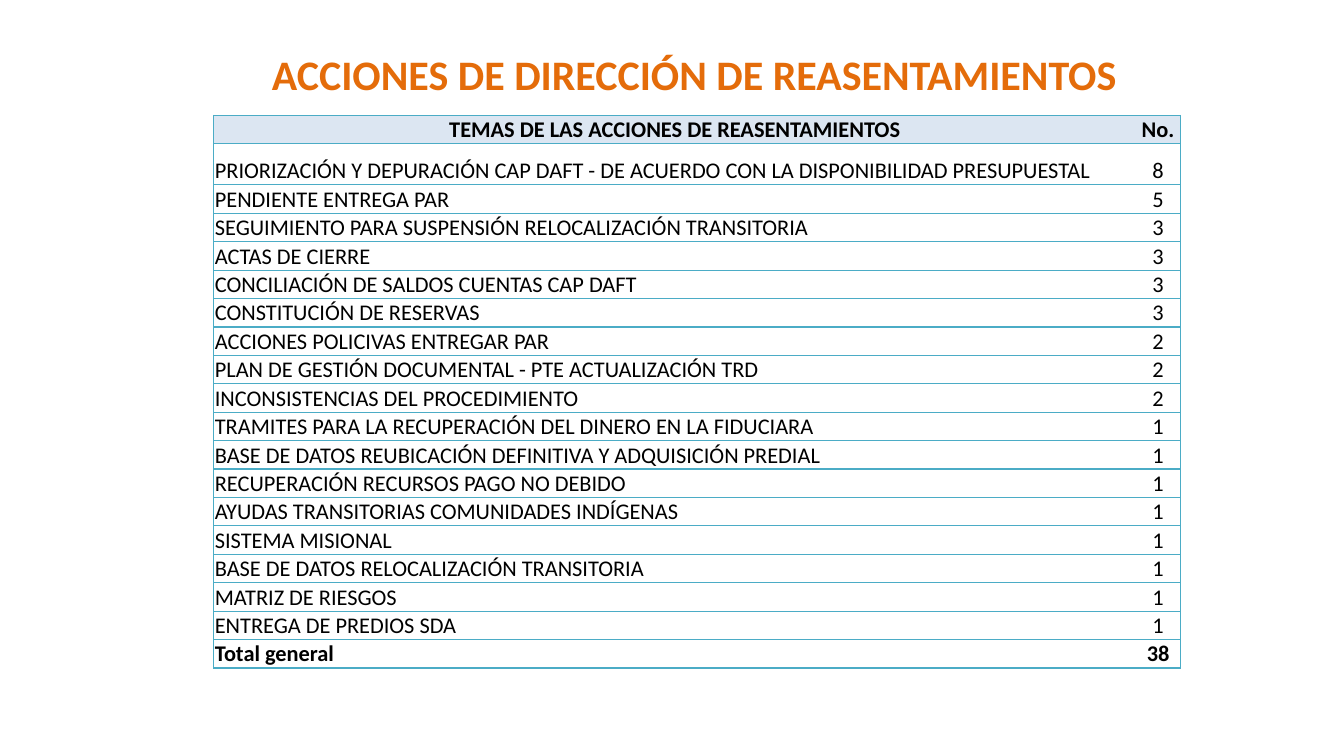
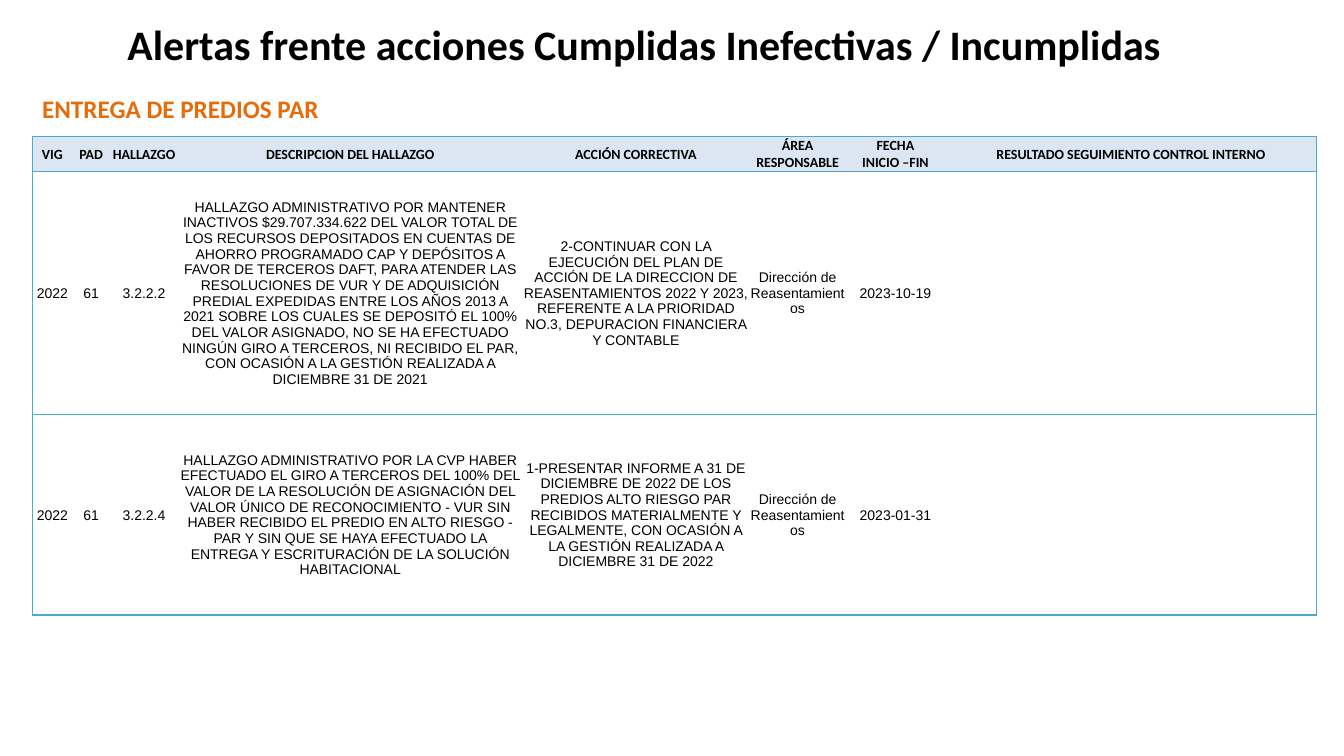
import pptx
import pptx.dml.color
import pptx.enum.text
import pptx.oxml
import pptx.oxml.ns
import pptx.util

Pt = pptx.util.Pt
ALIGN = pptx.enum.text.PP_ALIGN
ANCHOR = pptx.enum.text.MSO_ANCHOR

BLACK, WHITE, ORANGE = "000000", "FFFFFF", "E46C0A"
HEADER_FILL, BORDER = "DCE6F2", "4BACC6"

TITLE = {"name": "Calibri", "size": Pt(30), "bold": True}
SUBTITLE = {**TITLE, "size": Pt(18)}
CELL_MARGINS = {"margin_left": Pt(0.72), "margin_right": Pt(0.72),
                "margin_top": Pt(0.72), "margin_bottom": 0}

TOPICS = [
    ("TEMAS DE LAS ACCIONES DE REASENTAMIENTOS", "No."),
    ("PRIORIZACIÓN Y DEPURACIÓN CAP DAFT - DE ACUERDO CON LA DISPONIBILIDAD PRESUPUESTAL", "8"),
    ("PENDIENTE ENTREGA PAR", "5"),
    ("SEGUIMIENTO PARA SUSPENSIÓN RELOCALIZACIÓN TRANSITORIA", "3"),
    ("ACTAS DE CIERRE", "3"),
    ("CONCILIACIÓN DE SALDOS CUENTAS CAP DAFT", "3"),
    ("CONSTITUCIÓN DE RESERVAS", "3"),
    ("ACCIONES POLICIVAS ENTREGAR PAR", "2"),
    ("PLAN DE GESTIÓN DOCUMENTAL - PTE ACTUALIZACIÓN TRD", "2"),
    ("INCONSISTENCIAS DEL PROCEDIMIENTO", "2"),
    ("TRAMITES PARA LA RECUPERACIÓN DEL DINERO EN LA FIDUCIARA", "1"),
    ("BASE DE DATOS REUBICACIÓN DEFINITIVA Y ADQUISICIÓN PREDIAL", "1"),
    ("RECUPERACIÓN RECURSOS PAGO NO DEBIDO", "1"),
    ("AYUDAS TRANSITORIAS COMUNIDADES INDÍGENAS", "1"),
    ("SISTEMA MISIONAL", "1"),
    ("BASE DE DATOS RELOCALIZACIÓN TRANSITORIA", "1"),
    ("MATRIZ DE RIESGOS", "1"),
    ("ENTREGA DE PREDIOS SDA", "1"),
    ("Total general", "38"),
]

FINDINGS = [
    ("VIG", "PAD", "HALLAZGO", "DESCRIPCION DEL HALLAZGO", "ACCIÓN CORRECTIVA",
     "ÁREA RESPONSABLE", "FECHA\nINICIO –FIN", "RESULTADO SEGUIMIENTO CONTROL INTERNO"),
    ("2022", "61", "3.2.2.2",
     "HALLAZGO ADMINISTRATIVO POR MANTENER INACTIVOS $29.707.334.622 DEL VALOR TOTAL DE LOS "
     "RECURSOS DEPOSITADOS EN CUENTAS DE AHORRO PROGRAMADO CAP Y DEPÓSITOS A FAVOR DE TERCEROS "
     "DAFT, PARA ATENDER LAS RESOLUCIONES DE VUR Y DE ADQUISICIÓN PREDIAL EXPEDIDAS ENTRE LOS "
     "AÑOS 2013 A 2021 SOBRE LOS CUALES SE DEPOSITÓ EL 100% DEL VALOR ASIGNADO, NO SE HA "
     "EFECTUADO NINGÚN GIRO A TERCEROS, NI RECIBIDO EL PAR, CON OCASIÓN A LA GESTIÓN REALIZADA "
     "A DICIEMBRE 31 DE 2021",
     "2-CONTINUAR CON LA EJECUCIÓN DEL PLAN DE ACCIÓN DE LA DIRECCION DE REASENTAMIENTOS 2022 "
     "Y 2023, REFERENTE A LA PRIORIDAD NO.3, DEPURACION FINANCIERA Y CONTABLE",
     "Dirección de Reasentamientos", "2023-10-19", ""),
    ("2022", "61", "3.2.2.4",
     "HALLAZGO ADMINISTRATIVO POR LA CVP HABER EFECTUADO EL GIRO A TERCEROS DEL 100% DEL VALOR "
     "DE LA RESOLUCIÓN DE ASIGNACIÓN DEL VALOR ÚNICO DE RECONOCIMIENTO - VUR SIN HABER RECIBIDO "
     "EL PREDIO EN ALTO RIESGO - PAR Y SIN QUE SE HAYA EFECTUADO LA ENTREGA Y ESCRITURACIÓN DE "
     "LA SOLUCIÓN HABITACIONAL",
     "1-PRESENTAR INFORME A 31 DE DICIEMBRE DE 2022 DE LOS PREDIOS ALTO RIESGO PAR RECIBIDOS "
     "MATERIALMENTE Y LEGALMENTE, CON OCASIÓN A LA GESTIÓN REALIZADA A DICIEMBRE 31 DE 2022",
     "Dirección de Reasentamientos", "2023-01-31", ""),
]


def rgb(value):
    return pptx.dml.color.RGBColor.from_string(value)


def set_attrs(obj, values):
    for name, value in values.items():
        setattr(obj, name, value)


def write(tf, text, font, color=BLACK, align=ALIGN.LEFT):
    """Fill a text frame, one paragraph per line of text."""
    tf.text = text
    for p in tf.paragraphs:
        p.alignment = align
        for r in p.runs:
            set_attrs(r.font, font)
            r.font.color.rgb = rgb(color)


def add_text(s, box, text, font, color=BLACK, align=ALIGN.LEFT, **frame):
    tf = s.shapes.add_textbox(*map(Pt, box)).text_frame
    set_attrs(tf, {"word_wrap": True, **frame})
    write(tf, text, font, color, align)


def set_borders(cell, sides):
    """Draw the named sides (of L, R, T, B) and clear the others."""
    tcPr = cell._tc.get_or_add_tcPr()
    for side in "LRTB":
        fill = (f'<a:solidFill><a:srgbClr val="{BORDER}"/></a:solidFill>'
                if side in sides else "<a:noFill/>")
        tcPr.append(pptx.oxml.parse_xml(
            f'<a:ln{side} {pptx.oxml.ns.nsdecls("a")} w="{Pt(1)}">{fill}</a:ln{side}>'))


def add_table(s, left, top, widths, heights, rows, style):
    """style(row, column) gives the font, alignment and anchor of a cell."""
    frame = s.shapes.add_table(len(rows), len(widths), Pt(left), Pt(top),
                               Pt(sum(widths)), Pt(sum(heights)))
    table = frame.table
    set_attrs(table, {"first_row": False, "horz_banding": False})
    for column, width in zip(table.columns, widths):
        column.width = Pt(width)
    for row, height in zip(table.rows, heights):
        row.height = Pt(height)
    for i, row in enumerate(rows):
        for j, text in enumerate(row):
            cell = table.cell(i, j)
            font, align, anchor = style(i, j)
            set_attrs(cell, {**CELL_MARGINS, "vertical_anchor": anchor})
            set_borders(cell, "TB" + "L" * (j == 0) + "R" * (j == len(row) - 1))
            cell.fill.solid()
            cell.fill.fore_color.rgb = rgb(WHITE if i else HEADER_FILL)
            write(cell.text_frame, text, font, align=align)


def topic_style(i, j):
    last = len(TOPICS) - 1
    font = {"name": "Calibri", "size": Pt(16), "bold": i in (0, last)}
    align = ALIGN.CENTER if i == 0 or j == 1 else ALIGN.LEFT
    return font, align, ANCHOR.BOTTOM if i else ANCHOR.MIDDLE


def finding_style(i, j):
    font = {"name": "Arial" if i else "Calibri", "size": Pt(10), "bold": i == 0}
    return font, ALIGN.CENTER, ANCHOR.MIDDLE


def topics_slide(s):
    heights = [20.3, 29.3] + [20.3] * (len(TOPICS) - 2)
    add_table(s, 152.8, 82.5, [658.6, 31.7], heights, TOPICS, topic_style)
    add_text(s, (187.2, 31, 623.5, 43.9), "ACCIONES DE DIRECCIÓN DE REASENTAMIENTOS",
             TITLE, ORANGE, word_wrap=False)


def findings_slide(s):
    margins = dict.fromkeys(("margin_left", "margin_right", "margin_top", "margin_bottom"), Pt(9.4))
    add_text(s, (0, 0, 921, 59), "Alertas frente acciones Cumplidas Inefectivas / Incumplidas",
             TITLE, align=ALIGN.CENTER, vertical_anchor=ANCHOR.BOTTOM, **margins)
    add_table(s, 23, 97.6, [28.8, 26.6, 49, 245.5, 162.7, 68.4, 71.3, 265],
              [25, 173.5, 143.3], FINDINGS, finding_style)
    add_text(s, (23, 63.4, 746, 28.8), "ENTREGA DE PREDIOS PAR", SUBTITLE, ORANGE)


def main():
    prs = pptx.Presentation()
    set_attrs(prs, {"slide_width": Pt(960), "slide_height": Pt(540)})
    for build in (topics_slide, findings_slide):
        build(prs.slides.add_slide(prs.slide_layouts[6]))
    prs.save("out.pptx")


if __name__ == "__main__":
    main()
